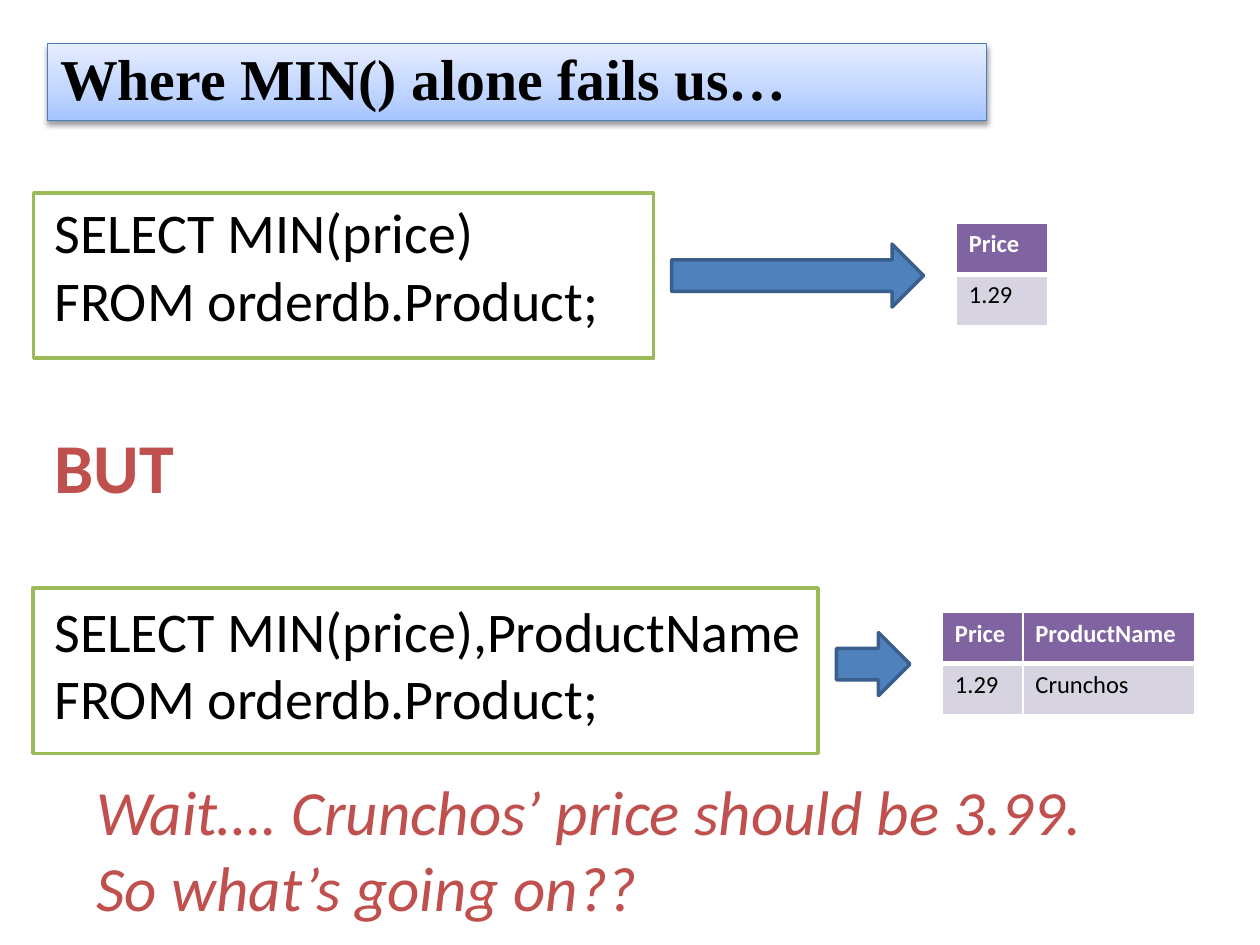
from lxml import etree
from pptx import Presentation
from pptx import util as u
from pptx.dml.color import RGBColor
from pptx.enum import shapes, text
from pptx.oxml import parse_xml
from pptx.oxml.ns import qn

Pt = u.Pt
COLORS = {
    "black": "000000", "white": "FFFFFF", "red": "C0504D", "green": "9BBB59",
    "blue": "4F81BD", "blue edge": "3A5F8C", "title edge": "4B7EBC",
    "purple": "8064A2", "lilac": "D8D3E0",
}
TITLE = "Where MIN() alone fails us…"
TITLE_GRADIENT = [(0, "A4C4FF"), (35, "BFD4FF"), (100, "E6EEFF")]
# lines, size, colour, bold, space before
BODY = [
    (["SELECT MIN(price)", "FROM orderdb.Product;"], 32, "black", False, 0),
    (["BUT"], 40, "red", True, 52),
    (["SELECT MIN(price),ProductName", "FROM orderdb.Product;"], 32, "black", False, 51),
]
REMARK = ["Wait…. Crunchos’ price should be 3.99.", "So what’s going on??"]
# left, top, column widths, rows
TABLES = [
    (546.5, 127.5, [52.5], [["Price"], ["1.29"]]),
    (538.5, 350, [46, 98], [["Price", "ProductName"], ["1.29", "Crunchos"]]),
]
ROW_HEIGHT = 29.2
ARROWS = [(383.75, 139.5, 144, 36), (478, 361.5, 42, 36)]
FRAMES = [(19.25, 110.25, 354.25, 94.5), (18.75, 336, 448.75, 94.5)]

NS = 'xmlns:a="http://schemas.openxmlformats.org/drawingml/2006/main"'


def rgb(name):
    return RGBColor.from_string(COLORS[name])


def add_span(para, words, size, color, font="Calibri", bold=False, italic=False):
    span = para.add_run()
    span.text = words
    span.font.name, span.font.size = font, Pt(size)
    span.font.bold, span.font.italic = bold, italic
    span.font.color.rgb = rgb(color)


def add_box(page, place):
    frame = page.shapes.add_textbox(*map(Pt, place)).text_frame
    frame.word_wrap = True
    return frame


def add_preset(page, kind, place, fill, edge, width):
    shape = page.shapes.add_shape(kind, *map(Pt, place))
    shape.shadow.inherit = False
    if fill:
        shape.fill.solid()
        shape.fill.fore_color.rgb = rgb(fill)
    else:
        shape.fill.background()
    shape.line.color.rgb = rgb(edge)
    shape.line.width = Pt(width)
    return shape


def add_title(page):
    bar = add_preset(page, shapes.MSO_SHAPE.RECTANGLE, (27.25, 25, 536.5, 44),
                     "blue", "title edge", 0.75)
    stops = "".join(f'<a:gs pos="{pos * 1000}"><a:srgbClr val="{color}"/></a:gs>'
                    for pos, color in TITLE_GRADIENT)
    props = bar.fill._xPr
    props.replace(props.find(qn("a:solidFill")), parse_xml(
        f'<a:gradFill {NS} rotWithShape="1"><a:gsLst>{stops}</a:gsLst>'
        '<a:lin ang="16200000" scaled="0"/></a:gradFill>'))
    props.find(qn("a:effectLst")).append(parse_xml(
        f'<a:outerShdw {NS} blurRad="{Pt(3.1)}" dist="{Pt(1.6)}" dir="5400000" rotWithShape="0">'
        '<a:srgbClr val="000000"><a:alpha val="38000"/></a:srgbClr></a:outerShdw>'))
    frame = bar.text_frame
    frame.word_wrap = True
    frame.vertical_anchor = text.MSO_ANCHOR.MIDDLE
    para = frame.paragraphs[0]
    para.alignment = text.PP_ALIGN.LEFT
    para.line_spacing = 0.9
    add_span(para, TITLE, 33, "black", "Times New Roman", bold=True)


def set_borders(cell, header):
    """White rules, with a heavier one below the header."""
    props = cell._tc.get_or_add_tcPr()
    for index, side in enumerate(("lnL", "lnR", "lnT", "lnB")):
        heavy = side == ("lnB" if header else "lnT")
        line = etree.Element(qn(f"a:{side}"), w=str(Pt(3 if heavy else 1)))
        fill = etree.SubElement(line, qn("a:solidFill"))
        etree.SubElement(fill, qn("a:srgbClr"), val=COLORS["white"])
        props.insert(index, line)


def add_result(page, left, top, widths, rows):
    table = page.shapes.add_table(len(rows), len(widths), Pt(left), Pt(top), Pt(sum(widths)),
                                  Pt(ROW_HEIGHT * len(rows))).table
    for column, width in zip(table.columns, widths):
        column.width = Pt(width)
    for r, values in enumerate(rows):
        header = r == 0
        for c, value in enumerate(values):
            cell = table.cell(r, c)
            cell.fill.solid()
            cell.fill.fore_color.rgb = rgb("purple" if header else "lilac")
            add_span(cell.text_frame.paragraphs[0], value, 14,
                     "white" if header else "black", bold=header)
            set_borders(cell, header)


def main():
    deck = Presentation()
    deck.slide_width, deck.slide_height = Pt(720), Pt(540)
    page = deck.slides.add_slide(deck.slide_layouts[6])

    frame = add_box(page, (24, 109.5, 648, 342))
    for index, (lines, size, color, bold, gap) in enumerate(BODY):
        para = frame.add_paragraph() if index else frame.paragraphs[0]
        para.space_before = Pt(gap)
        for number, line in enumerate(lines):
            if number:
                para.add_line_break()
            add_span(para, line, size, color, bold=bold)

    for result in TABLES:
        add_result(page, *result)
    for place in ARROWS:
        add_preset(page, shapes.MSO_SHAPE.RIGHT_ARROW, place, "blue", "blue edge", 2)

    frame = add_box(page, (48, 438, 653, 94.5))
    for index, line in enumerate(REMARK):
        para = frame.add_paragraph() if index else frame.paragraphs[0]
        add_span(para, line, 36, "red", italic=True)

    add_title(page)
    for place in FRAMES:
        add_preset(page, shapes.MSO_SHAPE.RECTANGLE, place, None, "green", 2)
    deck.save("out.pptx")


if __name__ == "__main__":
    main()
